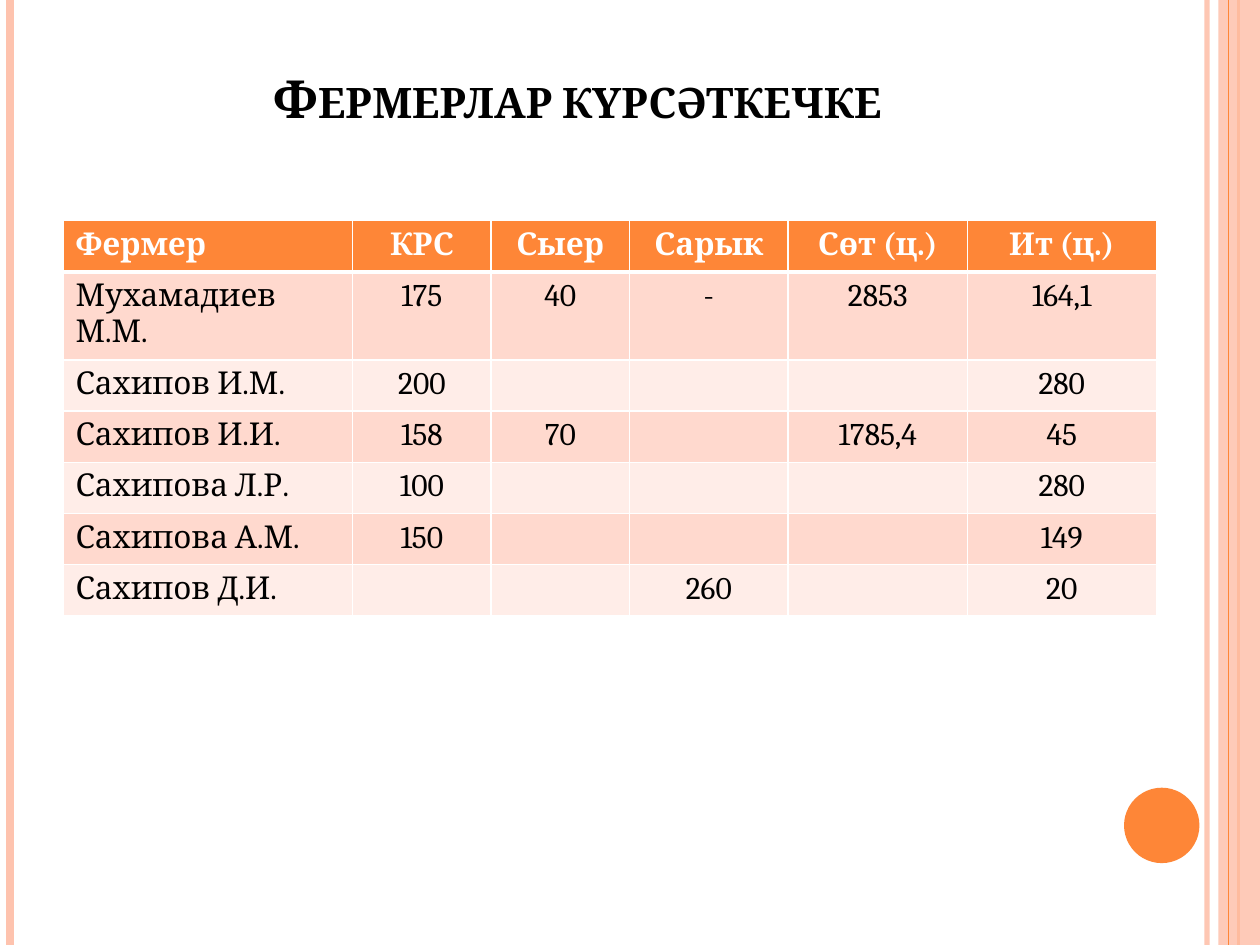
"""Build a slide with a table of farmers' results."""
from typing import NamedTuple

from lxml import etree
from pptx import Presentation
from pptx.dml.color import RGBColor
from pptx.enum.shapes import MSO_CONNECTOR, MSO_SHAPE
from pptx.enum.text import MSO_ANCHOR, PP_ALIGN
from pptx.oxml.ns import qn
from pptx.util import Cm, Pt

STRAIGHT = MSO_CONNECTOR.STRAIGHT
RECTANGLE, OVAL = MSO_SHAPE.RECTANGLE, MSO_SHAPE.OVAL
BOTTOM = MSO_ANCHOR.BOTTOM
LEFT, CENTER = PP_ALIGN.LEFT, PP_ALIGN.CENTER

ORANGE = RGBColor(0xFE, 0x86, 0x37)
PEACH = RGBColor(0xFE, 0xC3, 0xAE)
BAND_DARK = RGBColor(0xFF, 0xD9, 0xCE)
BAND_LIGHT = RGBColor(0xFF, 0xED, 0xE8)
WHITE = RGBColor(0xFF, 0xFF, 0xFF)
BLACK = RGBColor(0, 0, 0)

FONT = "Cambria"
PAGE_WIDTH, PAGE_HEIGHT = Cm(25.4), Cm(19.05)
COLUMN_WIDTHS = (5.84, 2.79, 2.79, 3.2, 3.61, 3.81)
ROW_HEIGHT, TALL_ROW_HEIGHT = 1.03, 1.7
FARMERS = (
    ("Фермер", "КРС", "Сыер", "Сарык", "Сөт (ц.)", "Ит (ц.)"),
    ("Мухамадиев М.М.", "175", "40", "-", "2853", "164,1"),
    ("Сахипов И.М.", "200", "", "", "", "280"),
    ("Сахипов И.И.", "158", "70", "", "1785,4", "45"),
    ("Сахипова Л.Р.", "100", "", "", "", "280"),
    ("Сахипова А.М.", "150", "", "", "", "149"),
    ("Сахипов Д.И.", "", "", "260", "", "20"),
)


class Stripe(NamedTuple):
    """A full-height vertical line."""

    x: float
    width: float
    color: RGBColor
    opacity: int = 100


class Block(NamedTuple):
    """A plain filled shape."""

    kind: int
    left: float
    top: float
    width: float
    height: float
    color: RGBColor
    opacity: int = 100


DECORATIONS = (
    Stripe(24.33, 3, PEACH, 93),
    Stripe(0.2, 4.5, PEACH),
    Stripe(24.97, 1.5, ORANGE),
    Block(RECTANGLE, 24.56, 0, 0.84, 19.05, PEACH, 87),
    Stripe(24.77, 0.75, ORANGE),
    Block(OVAL, 22.66, 15.88, 1.52, 1.52, ORANGE),
)


def set_opacity(element, percent: int) -> None:
    """Make the first colour of an element partly transparent."""
    if percent < 100:
        color = next(element.iter(qn("a:srgbClr")))
        etree.SubElement(color, qn("a:alpha"), val=str(percent * 1000))


def draw_stripe(page, stripe: Stripe) -> None:
    """Draw a line from the top of the page to its bottom."""
    x = Cm(stripe.x)
    line = page.shapes.add_connector(STRAIGHT, x, 0, x, PAGE_HEIGHT)
    line.line.color.rgb = stripe.color
    line.line.width = Pt(stripe.width)
    properties = line._element.spPr
    set_opacity(properties, stripe.opacity)
    etree.SubElement(properties, qn("a:effectLst"))


def draw_block(page, block: Block) -> None:
    """Draw a filled shape without an outline."""
    shape = page.shapes.add_shape(
        block.kind, Cm(block.left), Cm(block.top), Cm(block.width), Cm(block.height)
    )
    shape.shadow.inherit = False
    shape.fill.solid()
    shape.fill.fore_color.rgb = block.color
    shape.line.fill.background()
    set_opacity(shape._element.spPr, block.opacity)


def add_span(para, text: str, size: float, color: RGBColor, bold: bool):
    """Add a styled run to a paragraph."""
    span = para.add_run()
    span.text = text
    span.font.name = FONT
    span.font.size = Pt(size)
    span.font.bold = bold
    span.font.color.rgb = color
    return span


def draw_title(page, text: str) -> None:
    """Write the slide title in bold small capitals."""
    box = page.shapes.add_textbox(Cm(1.27), Cm(0.76), Cm(20.75), Cm(1.96))
    frame = box.text_frame
    frame.word_wrap = True
    frame.vertical_anchor = BOTTOM
    para = frame.paragraphs[0]
    para.alignment = CENTER
    span = add_span(para, text, 30, BLACK, True)
    span._r.get_or_add_rPr().set("cap", "small")


def add_border(cell, side: str, width: float) -> None:
    """Add a white border to one side of a cell."""
    properties = cell._tc.get_or_add_tcPr()
    border = etree.SubElement(properties, qn(f"a:ln{side}"), w=str(Pt(width)))
    fill = etree.SubElement(border, qn("a:solidFill"))
    etree.SubElement(fill, qn("a:srgbClr"), val=str(WHITE))


def fill_cell(cell, text: str, row: int, column: int) -> None:
    """Write and style a cell by its place in the table."""
    header = row == 0
    top, bottom = (3 if row == 1 else 1), (3 if header else 1)
    for side, width in zip("LRTB", (1, 1, top, bottom)):
        add_border(cell, side, width)
    cell.fill.solid()
    band = BAND_DARK if row % 2 else BAND_LIGHT
    cell.fill.fore_color.rgb = ORANGE if header else band
    para = cell.text_frame.paragraphs[0]
    para.alignment = CENTER if column else LEFT
    if text:
        add_span(para, text, 18, WHITE if header else BLACK, header)


def draw_table(page) -> None:
    """Draw the table of farmers."""
    heights = [ROW_HEIGHT] * len(FARMERS)
    heights[1] = TALL_ROW_HEIGHT
    table = page.shapes.add_table(
        len(heights), len(COLUMN_WIDTHS), Cm(1.27), Cm(4.45),
        Cm(sum(COLUMN_WIDTHS)), Cm(sum(heights)),
    ).table
    for column, width in zip(table.columns, COLUMN_WIDTHS):
        column.width = Cm(width)
    for row, height in zip(table.rows, heights):
        row.height = Cm(height)
    for row, texts in enumerate(FARMERS):
        for column, text in enumerate(texts):
            fill_cell(table.cell(row, column), text, row, column)


def main() -> None:
    """Build and save the deck."""
    deck = Presentation()
    deck.slide_width, deck.slide_height = PAGE_WIDTH, PAGE_HEIGHT
    page = deck.slides.add_slide(deck.slide_layouts[6])
    for item in DECORATIONS:
        draw = draw_stripe if isinstance(item, Stripe) else draw_block
        draw(page, item)
    draw_title(page, "Фермерлар күрсәткечке")
    draw_table(page)
    deck.save("out.pptx")


if __name__ == "__main__":
    main()
